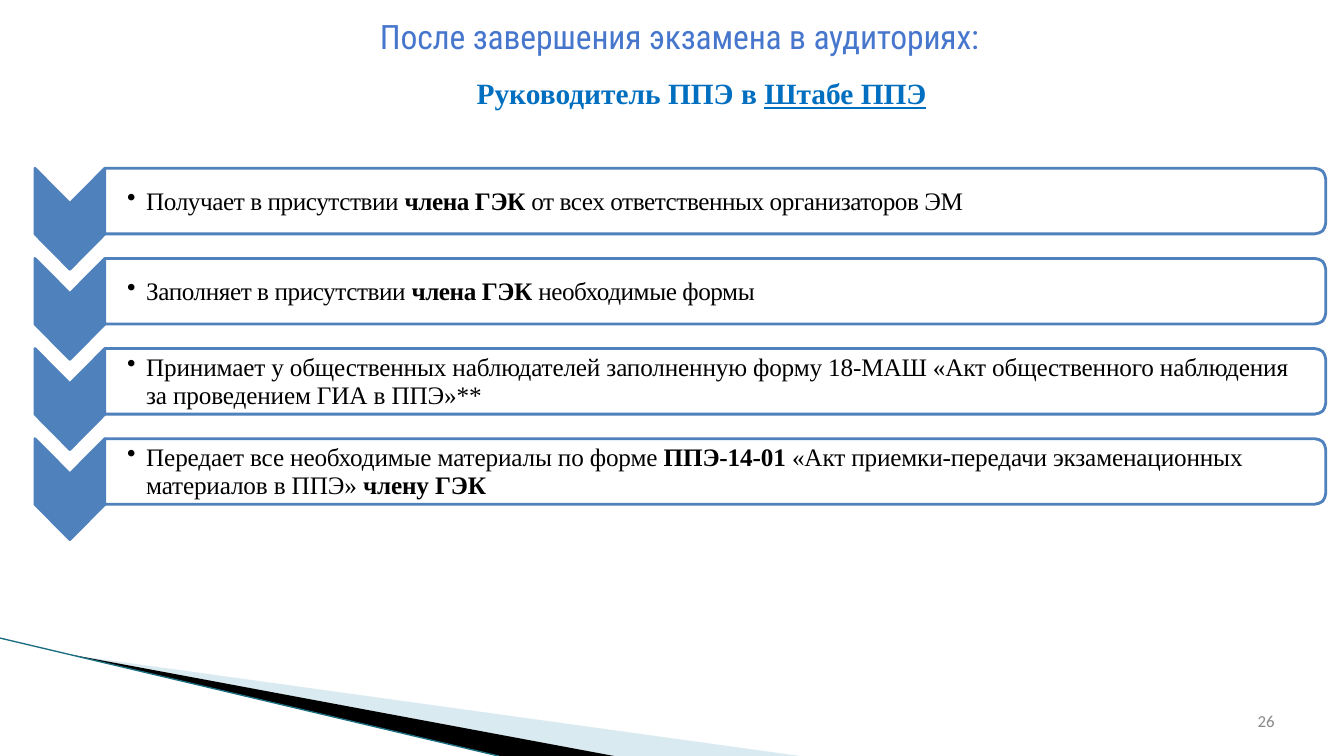
from lxml import etree
from pptx import Presentation
from pptx import util as u
from pptx.dml.color import RGBColor
from pptx.enum import shapes, text
from pptx.oxml import ns

COLORS = {
    "heading": "4776CD",
    "subheading": "006FC0",
    "step": "4F81BC",
    "card": "FFFFFF",
    "body": "000000",
    "number": "888888",
    "pale": "A0CBDC",
    "edge": "1B6F80",
}
SERIF = "Times New Roman"

STEPS = [
    (-0.3, [("Получает в присутствии ", False), ("члена ГЭК ", True),
            ("от всех ответственных организаторов ЭМ", False)]),
    (-0.3, [("Заполняет в присутствии ", False), ("члена ГЭК ", True),
            ("необходимые формы", False)]),
    (-0.1, [("Принимает у общественных наблюдателей заполненную форму 18-МАШ "
             "«Акт общественного наблюдения за проведением ГИА в ППЭ»**", False)]),
    (-0.1, [("Передает все необходимые материалы по форме ", False),
            ("ППЭ-14-01 ", True),
            ("«Акт приемки-передачи экзаменационных материалов в ППЭ» ", False),
            ("члену ГЭК", True)]),
]


class SlideBuilder:
    def __init__(self, presentation):
        self.width = presentation.slide_width
        self.height = presentation.slide_height
        self.slide = presentation.slides.add_slide(presentation.slide_layouts[6])

    def x(self, percent):
        return round(self.width * percent / 100)

    def y(self, percent):
        return round(self.height * percent / 100)

    def color(self, name):
        return RGBColor.from_string(COLORS[name])

    def polygon(self, points, fill, line=None, alpha=None):
        corners = [(self.x(left), self.y(top)) for left, top in points]
        builder = self.slide.shapes.build_freeform(*corners[0])
        builder.add_line_segments(corners[1:], close=True)
        shape = builder.convert_to_shape()
        shape.shadow.inherit = False
        shape.fill.solid()
        shape.fill.fore_color.rgb = self.color(fill)
        if alpha:
            color = shape.fill._xPr.find(".//" + ns.qn("a:srgbClr"))
            etree.SubElement(color, ns.qn("a:alpha"), val=str(alpha * 1000))
        if line:
            shape.line.color.rgb = self.color(line)
            shape.line.width = u.Pt(2.04)
        else:
            shape.line.fill.background()
        return shape

    def connector(self, start, end, line):
        shape = self.slide.shapes.add_connector(
            shapes.MSO_CONNECTOR.STRAIGHT,
            self.x(start[0]), self.y(start[1]), self.x(end[0]), self.y(end[1]))
        shape.line.color.rgb = self.color(line)
        shape.line.width = u.Pt(0.95)
        etree.SubElement(shape._element.spPr, ns.qn("a:effectLst"))

    def frame(self, shape, margin=0.0):
        frame = shape.text_frame
        frame.word_wrap = True
        frame.vertical_anchor = text.MSO_ANCHOR.MIDDLE
        frame.margin_left = frame.margin_right = self.x(margin)
        frame.margin_top = frame.margin_bottom = 0
        return frame

    def run(self, paragraph, words, size, font, color, bold=False, spacing=0.0):
        run = paragraph.add_run()
        run.text = words
        run.font.size = u.Pt(size)
        run.font.name = font
        run.font.bold = bold
        run.font.color.rgb = self.color(color)
        run._r.get_or_add_rPr().set("spc", str(round(spacing * 100)))
        return run

    def label(self, left, top, width, height):
        shape = self.slide.shapes.add_textbox(
            self.x(left), self.y(top), self.x(width), self.y(height))
        paragraph = self.frame(shape).paragraphs[0]
        paragraph.alignment = text.PP_ALIGN.CENTER
        return paragraph

    def chevron(self, left, top, width, height, depth):
        middle, right = left + width / 2, left + width
        self.polygon([(left, top), (middle, top + depth), (right, top),
                      (right, top + height), (middle, top + height + depth),
                      (left, top + height)], "step", "step")

    def card(self, left, top, right, height, parts, spacing):
        bottom = top + height
        half = [(right - 0.83, 0), (right - 0.5, 0.13), (right - 0.23, 0.4),
                (right - 0.08, 0.87), (right, 1.47)]
        upper = [(across, top + down) for across, down in half]
        lower = [(across, bottom - down) for across, down in reversed(half)]
        shape = self.polygon([(left, top), *upper, *lower, (left, bottom)],
                             "card", "step")
        paragraph = self.frame(shape, 1.58).paragraphs[0]
        paragraph.alignment = text.PP_ALIGN.LEFT
        paragraph.line_spacing = u.Pt(20.1)
        properties = paragraph._p.get_or_add_pPr()
        properties.set("marL", str(u.Inches(0.2)))
        properties.set("indent", str(-u.Inches(0.19)))
        etree.SubElement(properties, ns.qn("a:buChar"), char="•")
        for words, bold in parts:
            self.run(paragraph, words, 18, SERIF, "body", bold, spacing)


def main():
    presentation = Presentation()
    presentation.slide_width = u.Inches(13.33)
    presentation.slide_height = u.Inches(7.5)
    builder = SlideBuilder(presentation)

    builder.polygon([(5.5, 86.7), (59.5, 100), (45.6, 100)], "pale", alpha=40)
    builder.polygon([(5.3, 86.6), (45.7, 100), (37.2, 100)], "body")
    builder.connector((0, 84.4), (37.1, 100), "edge")

    heading = builder.label(20, 1.6, 61.1, 6.4)
    builder.run(heading, "После завершения экзамена в аудиториях:", 24,
                "Roboto Condensed", "heading", spacing=-0.1)
    subheading = builder.label(25, 9.2, 54.4, 6.2)
    for words, underlined in [("Руководитель ППЭ в ", False), ("Штабе ППЭ", True)]:
        run = builder.run(subheading, words, 21, SERIF, "subheading", True)
        run.font.underline = underlined

    for index, (spacing, parts) in enumerate(STEPS):
        top = 22.27 + index * 11.92
        builder.chevron(2.6, top, 5.2, 8.67, 4.67)
        builder.card(7.8, top, 98.65, 8.67, parts, spacing)

    number = builder.label(92.9, 93.8, 2.6, 3)
    builder.run(number, "26", 12, "Calibri", "number")
    presentation.save("out.pptx")


if __name__ == "__main__":
    main()
